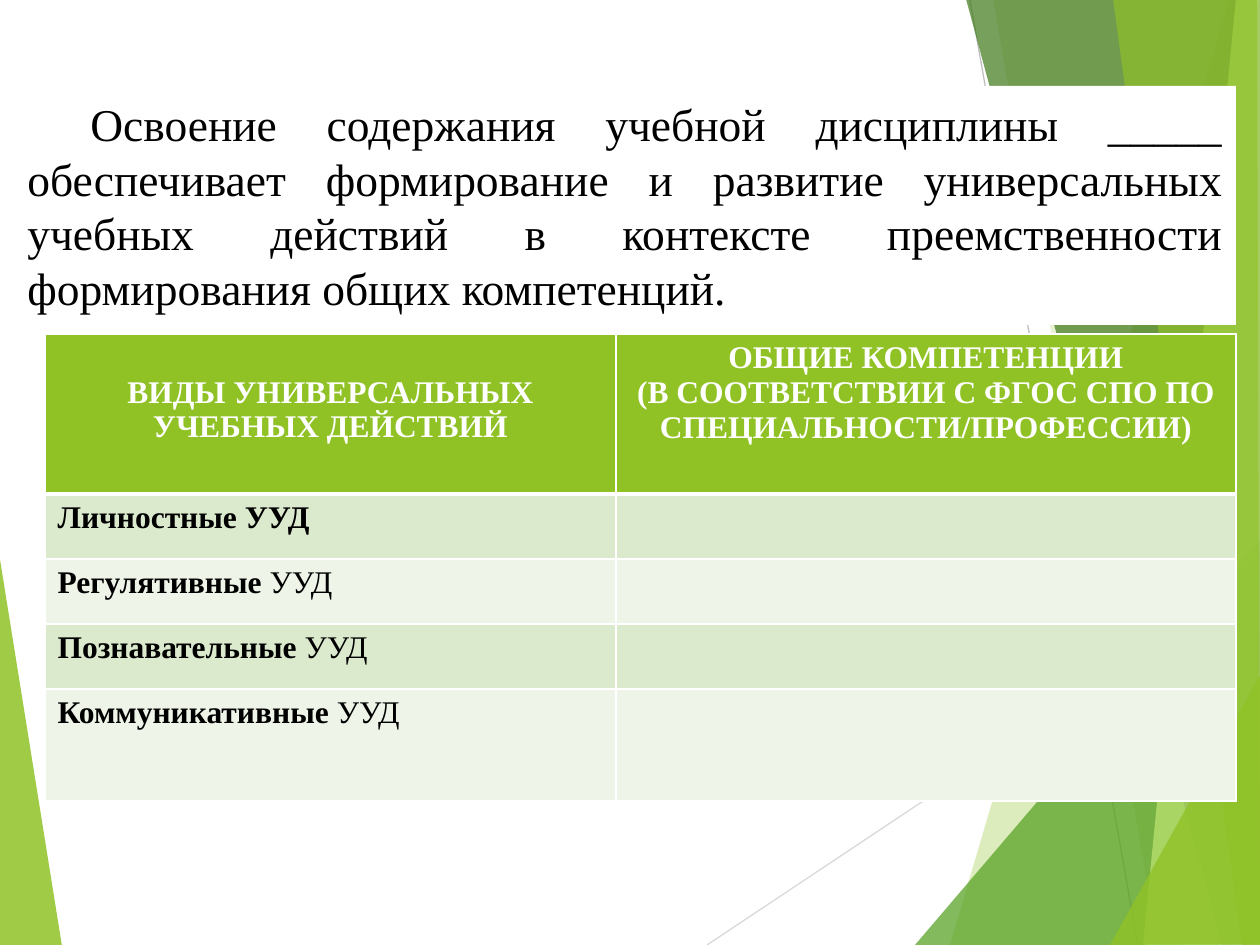
from dataclasses import dataclass

from lxml.etree import SubElement
from pptx import Presentation
from pptx.dml.color import RGBColor
from pptx.enum.shapes import MSO_CONNECTOR as Connector
from pptx.enum.text import MSO_ANCHOR as Anchor, PP_ALIGN as Align
from pptx.oxml.ns import qn
from pptx.util import Pt

PX = 914400 / 126  # EMU in one px


@dataclass(frozen=True)
class Theme:
    font: str = "Times New Roman"
    title_size: int = 26
    table_size: int = 18
    text: str = "000000"
    white: str = "FFFFFF"
    lime: str = "90C226"
    green: str = "54A021"
    forest: str = "3F7819"
    pale_lime: str = "C0E474"
    bands: tuple = ("DBE9CD", "EEF4E8")
    light_line: str = "D9D9D9"
    dark_line: str = "BFBFBF"


THEME = Theme()

# Decoration: colour, opacity in percent, corner points
LEFT_WEDGE = (THEME.lime, 85, [(-1, 553), (62, 946), (-1, 945)])
RIGHT_FACETS = [
    (THEME.lime, 30, [(1229, 0), (950, 945), (1262, 946), (1261, 1)]),
    (THEME.lime, 20, [(993, -1), (1158, 945), (1261, 945), (1261, -1)]),
    (THEME.green, 72, [(915, 945), (1260, 541), (1261, 945)]),
    (THEME.forest, 70, [(966, -1), (1222, 945), (1261, 944), (1261, -1)]),
    (THEME.pale_lime, 70, [(1236, -1), (1143, 945), (1261, 945), (1260, -1)]),
    (THEME.lime, 65, [(1113, -1), (1242, 945), (1260, 945), (1257, -1)]),
    (THEME.lime, 80, [(1110, 945), (1261, 674), (1261, 944)]),
]
THIN_LINES = [
    (THEME.light_line, (707, 945), (1261, 576)),
    (THEME.dark_line, (970, 0), (1138, 945)),
]

TITLE = ("Освоение содержания учебной дисциплины _____ обеспечивает формирование "
         "и развитие универсальных учебных действий в контексте преемственности "
         "формирования общих компетенций.")
HEADERS = [
    ["ВИДЫ УНИВЕРСАЛЬНЫХ УЧЕБНЫХ ДЕЙСТВИЙ"],
    ["ОБЩИЕ КОМПЕТЕНЦИИ", "(В СООТВЕТСТВИИ С ФГОС СПО ПО СПЕЦИАЛЬНОСТИ/ПРОФЕССИИ)"],
]
# Row label: bold part, regular part
ACTIONS = [
    ("Личностные УУД", ""),
    ("Регулятивные", " УУД"),
    ("Познавательные", " УУД"),
    ("Коммуникативные ", "УУД"),
]
COLUMN_WIDTHS = [571, 620]
ROW_HEIGHTS = [160, 65, 65, 65, 112]


def px(length):
    return round(length * PX)


def rgb(value):
    return RGBColor.from_string(value)


def paint(shape, colour):
    shape.fill.solid()
    shape.fill.fore_color.rgb = rgb(colour)


def style_run(run, size, colour, bold=False):
    run.font.name = THEME.font
    run.font.size = Pt(size)
    run.font.bold = bold
    run.font.color.rgb = rgb(colour)


def add_facet(slide, box, colour, opacity, points):
    left, top = box[:2]
    corners = [(left + x, top + y) for x, y in points]
    builder = slide.shapes.build_freeform(*corners[0], scale=PX)
    builder.add_line_segments(corners[1:], close=True)
    shape = builder.convert_to_shape()
    shape.shadow.inherit = False
    shape.line.fill.background()
    paint(shape, colour)
    colour_node = shape._element.spPr.find(qn("a:solidFill"))[0]
    SubElement(colour_node, qn("a:alpha"), val=str(opacity * 1000))


def add_thin_line(slide, box, colour, start, end):
    left, top = box[:2]
    line = slide.shapes.add_connector(
        Connector.STRAIGHT, px(left + start[0]), px(top + start[1]),
        px(left + end[0]), px(top + end[1]))
    line.line.color.rgb = rgb(colour)
    line.line.width = Pt(0.75)
    SubElement(line._element.spPr, qn("a:effectLst"))


def add_decoration(slide, box):
    add_facet(slide, box, *LEFT_WEDGE)
    for thin_line in THIN_LINES:
        add_thin_line(slide, box, *thin_line)
    for facet in RIGHT_FACETS:
        add_facet(slide, box, *facet)


def add_title(slide, box):
    shape = slide.shapes.add_textbox(*map(px, box))
    paint(shape, THEME.white)
    text_frame = shape.text_frame
    text_frame.word_wrap = True
    text_frame.vertical_anchor = Anchor.MIDDLE
    text_frame.text = TITLE
    paragraph = text_frame.paragraphs[0]
    paragraph.alignment = Align.JUSTIFY
    paragraph._p.get_or_add_pPr().set("indent", str(px(63)))
    style_run(paragraph.runs[0], THEME.title_size, THEME.text)


def style_cell(cell, colour, bottom_width):
    # Borders come before the fill in the cell properties
    properties = cell._tc.get_or_add_tcPr()
    for side, width in (("L", 1), ("R", 1), ("T", 1), ("B", bottom_width)):
        border = SubElement(properties, qn(f"a:ln{side}"), w=str(Pt(width)))
        fill = SubElement(border, qn("a:solidFill"))
        SubElement(fill, qn("a:srgbClr"), val=THEME.white)
    paint(cell, colour)


def fill_header(cell, lines):
    cell.text_frame.text = "\n".join(lines)
    for paragraph in cell.text_frame.paragraphs:
        paragraph.alignment = Align.CENTER
        style_run(paragraph.runs[0], THEME.table_size, THEME.white, bold=True)


def fill_label(cell, parts):
    paragraph = cell.text_frame.paragraphs[0]
    for part, bold in zip(parts, (True, False)):
        if part:
            run = paragraph.add_run()
            run.text = part
            style_run(run, THEME.table_size, THEME.text, bold)


def add_actions_table(slide, box):
    frame = slide.shapes.add_table(
        len(ROW_HEIGHTS), len(COLUMN_WIDTHS), *map(px, box))
    table = frame.table
    for column, width in zip(table.columns, COLUMN_WIDTHS):
        column.width = px(width)
    for index, (row, height) in enumerate(zip(table.rows, ROW_HEIGHTS)):
        row.height = px(height)
        colour = THEME.bands[(index - 1) % 2] if index else THEME.lime
        for cell in row.cells:
            style_cell(cell, colour, 1 if index else 3)
    for column, lines in enumerate(HEADERS):
        fill_header(table.cell(0, column), lines)
    table.cell(0, 0).margin_top = px(41)  # starts one line lower
    for row, parts in enumerate(ACTIONS, start=1):
        fill_label(table.cell(row, 0), parts)


def main():
    presentation = Presentation()
    presentation.slide_width, presentation.slide_height = px(1260), px(945)
    slide = presentation.slides.add_slide(presentation.slide_layouts[6])
    add_decoration(slide, (0, 0, 1260, 945))
    add_title(slide, (15, 86, 1221, 239))
    add_actions_table(slide, (45, 334, sum(COLUMN_WIDTHS), sum(ROW_HEIGHTS)))
    presentation.save("out.pptx")


if __name__ == "__main__":
    main()
